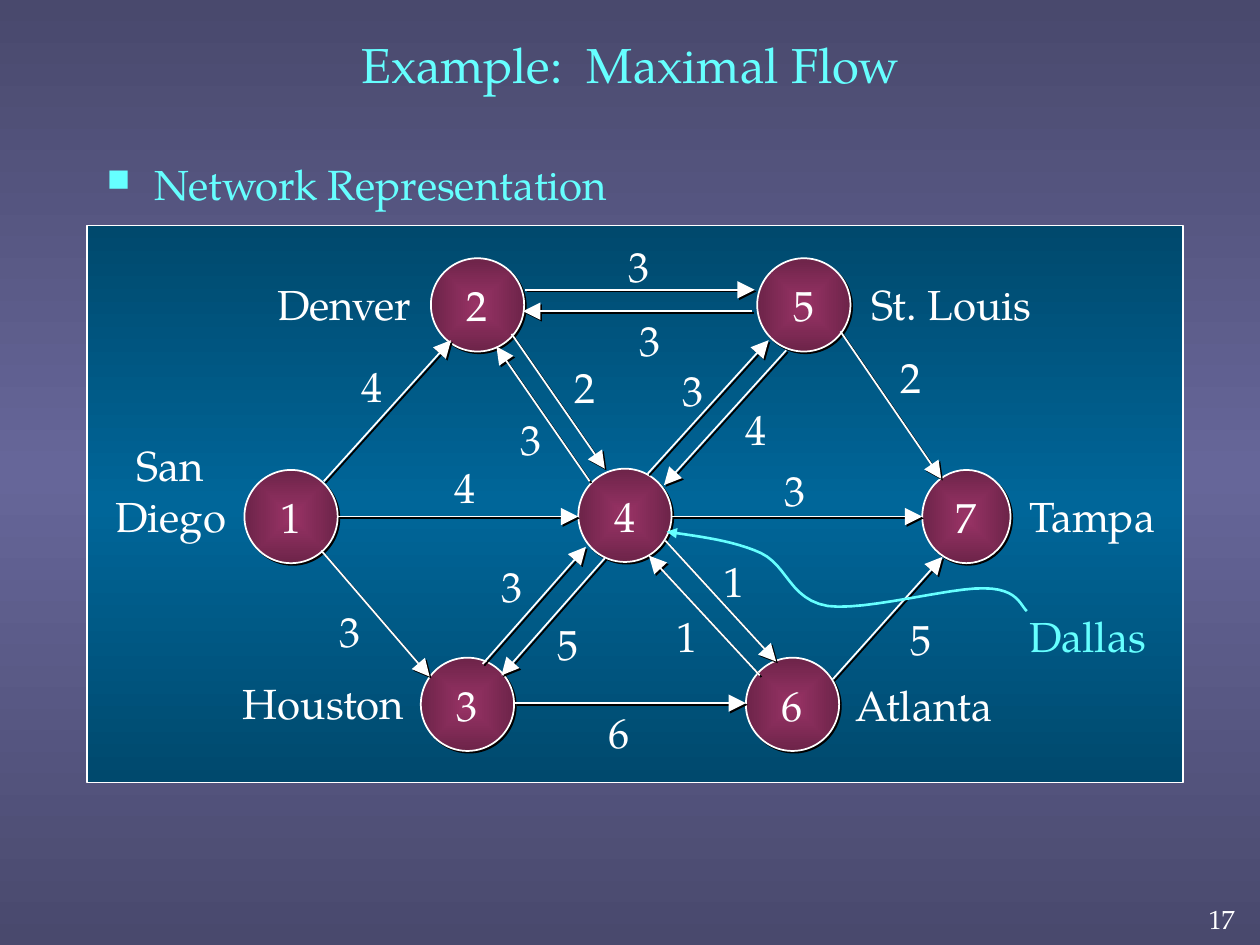
import pptx
import pptx.dml.color
import pptx.enum.shapes
import pptx.enum.text
import pptx.oxml
import pptx.oxml.ns
import pptx.util

Inches = pptx.util.Inches
Pt = pptx.util.Pt
ALIGN = pptx.enum.text.PP_ALIGN
ANCHOR = pptx.enum.text.MSO_ANCHOR
AUTO = pptx.enum.text.MSO_AUTO_SIZE
SHAPE = pptx.enum.shapes.MSO_SHAPE

FONT = "TeX Gyre Pagella"
WHITE, CYAN = "FFFFFF", "66FFFF"
PAGE_STOPS = [(0, "49496D"), (50, "666699"), (100, "49496D")]
PANEL_STOPS = [(0, "00496D"), (50, "006699"), (100, "00496D")]
NODE_STOPS = [(0, "993366"), (100, "6D2449")]
SHADOW = ('<a:outerShdw dist="17780" dir="2700000" algn="ctr" rotWithShape="0">'
          '<a:srgbClr val="000000"/></a:outerShdw>')

TITLE = "Example:  Maximal Flow"
HEADING = "Network Representation"
NODE_HEIGHT = 0.74
NODES = [
    ("2", 3.42, 2.05, 0.74), ("5", 6.01, 2.05, 0.74),
    ("1", 1.94, 3.73, 0.74), ("4", 4.59, 3.72, 0.74), ("7", 7.32, 3.73, 0.7),
    ("3", 3.34, 5.22, 0.74), ("6", 5.92, 5.22, 0.74),
]
ARCS = [
    ((2.57, 3.82), (3.58, 2.7), "4", (2.77, 2.81)),
    ((2.68, 4.1), (4.59, 4.1), "4", (3.51, 3.61)),
    ((2.55, 4.37), (3.41, 5.37), "3", (2.6, 4.76)),
    ((4.17, 2.3), (5.99, 2.3), "3", (4.89, 1.86)),
    ((5.97, 2.47), (4.15, 2.47), "3", (4.98, 2.45)),
    ((4.06, 2.65), (4.8, 3.72), "2", (4.46, 2.82)),
    ((4.68, 3.82), (3.94, 2.75), "3", (4.03, 3.23)),
    ((5.14, 3.76), (6.1, 2.7), "3", (5.32, 2.84)),
    ((6.24, 2.78), (5.27, 3.85), "4", (5.82, 3.15)),
    ((6.67, 2.63), (7.47, 3.8), "2", (7.05, 2.74)),
    ((5.33, 4.1), (7.32, 4.1), "3", (6.13, 3.64)),
    ((5.28, 4.29), (6.16, 5.25), "1", (5.64, 4.36)),
    ((6.03, 5.36), (5.15, 4.41), "1", (5.27, 4.8)),
    ((3.83, 5.27), (4.65, 4.34), "3", (3.88, 4.4)),
    ((4.8, 4.43), (3.98, 5.36), "5", (4.33, 4.86)),
    ((4.09, 5.58), (5.92, 5.58), "6", (4.73, 5.56)),
    ((6.61, 5.39), (7.48, 4.42), "5", (7.13, 4.82)),
]
SHADOWED_LABEL = (7.13, 4.82)
CITIES = [
    ("Denver", 2.1, 2.16, 1.29, 0.5, WHITE),
    ("San\nDiego", 0.81, 3.44, 1.09, 0.9, WHITE),
    ("St. Louis", 6.82, 2.16, 1.48, 0.5, WHITE),
    ("Houston", 1.83, 5.33, 1.49, 0.5, WHITE),
    ("Tampa", 8.07, 3.84, 1.23, 0.5, WHITE),
    ("Atlanta", 6.69, 5.34, 1.3, 0.5, WHITE),
    ("Dallas", 8.07, 4.8, 1.13, 0.5, CYAN),
]
POINTER_START = (5.29, 4.22)
POINTER_CURVES = [
    ((5.56, 4.26), (5.82, 4.29), (6.04, 4.39)),
    ((6.25, 4.49), (6.27, 4.76), (6.57, 4.81)),
    ((6.87, 4.85), (7.55, 4.66), (7.81, 4.67)),
    ((8.08, 4.67), (8.1, 4.81), (8.15, 4.85)),
]
CURVE_STEPS = 12


def color(value):
    return pptx.dml.color.RGBColor.from_string(value)


def add_xml(parent, markup):
    namespace = pptx.oxml.ns.nsdecls("a")
    wrapper = pptx.oxml.parse_xml(f"<a:wrapper {namespace}>{markup}</a:wrapper>")
    for child in list(wrapper):
        parent.append(child)


def set_gradient(fill, element, stops, radial=False):
    fill.gradient()
    gradient = element.xpath(".//a:gradFill")[0]
    for child in list(gradient):
        gradient.remove(child)
    marks = "".join(f'<a:gs pos="{position * 1000}"><a:srgbClr val="{value}"/></a:gs>'
                    for position, value in stops)
    direction = ('<a:path path="shape"><a:fillToRect l="50000" t="50000" r="50000" b="50000"/></a:path>'
                 if radial else '<a:lin ang="5400000" scaled="0"/>')
    add_xml(gradient, f"<a:gsLst>{marks}</a:gsLst>{direction}")


def set_line(line, value=WHITE, width=1):
    line.color.rgb = color(value)
    line.width = Pt(width)


def set_shadow(element):
    add_xml(element.spPr, f"<a:effectLst>{SHADOW}</a:effectLst>")


def write(shape, text, size=24, value=WHITE, align=ALIGN.LEFT, anchor=ANCHOR.TOP,
          wrap=False, auto=AUTO.NONE, shadow=False):
    frame = shape.text_frame
    frame.text = text
    frame.word_wrap = wrap
    frame.auto_size = auto
    frame.vertical_anchor = anchor
    for para in frame.paragraphs:
        para.alignment = align
        for span in para.runs:
            span.font.size = Pt(size)
            span.font.color.rgb = color(value)
            if shadow:
                add_xml(span.font._element, f"<a:effectLst>{SHADOW}</a:effectLst>")
            span.font.name = FONT
    return frame


def add_text(page, text, left, top, width, height, **style):
    box = page.shapes.add_textbox(Inches(left), Inches(top), Inches(width), Inches(height))
    return write(box, text, **style)


def add_node(page, text, left, top, width):
    node = page.shapes.add_shape(SHAPE.OVAL, Inches(left), Inches(top),
                                 Inches(width), Inches(NODE_HEIGHT))
    set_gradient(node.fill, node.element, NODE_STOPS, radial=True)
    set_line(node.line)
    set_shadow(node.element)
    write(node, text, align=ALIGN.CENTER, anchor=ANCHOR.MIDDLE)


def add_arc(page, start, end):
    arc = page.shapes.add_connector(pptx.enum.shapes.MSO_CONNECTOR.STRAIGHT,
                                    *(Inches(value) for value in start + end))
    set_line(arc.line)
    add_xml(arc.element.spPr.ln, '<a:tailEnd type="triangle" w="lg" len="lg"/>')
    set_shadow(arc.element)


def curve_points(start, curves):
    points = []
    for first, second, end in curves:
        for step in range(1, CURVE_STEPS + 1):
            t = step / CURVE_STEPS
            weights = ((1 - t) ** 3, 3 * t * (1 - t) ** 2, 3 * t * t * (1 - t), t ** 3)
            points.append(tuple(
                Inches(sum(weight * point[axis] for weight, point
                           in zip(weights, (start, first, second, end))))
                for axis in (0, 1)))
        start = end
    return points


def add_pointer(page):
    builder = page.shapes.build_freeform(*(Inches(value) for value in POINTER_START))
    builder.add_line_segments(curve_points(POINTER_START, POINTER_CURVES), close=False)
    pointer = builder.convert_to_shape()
    pointer.fill.background()
    set_line(pointer.line, CYAN, 1.5)
    add_xml(pointer.element.spPr.ln, '<a:headEnd type="triangle"/>')
    pointer.shadow.inherit = False


def main():
    deck = pptx.Presentation()
    deck.slide_width, deck.slide_height = Inches(10), Inches(7.5)
    page = deck.slides.add_slide(deck.slide_layouts.get_by_name("Title Only"))
    set_gradient(page.background.fill, page.element, PAGE_STOPS)

    title = page.shapes.title
    title.left, title.top, title.width, title.height = map(Inches, (0.75, 0.06, 8.5, 0.89))
    write(title, TITLE, size=28, value=CYAN, align=ALIGN.CENTER, anchor=ANCHOR.MIDDLE, wrap=True)

    heading = add_text(page, HEADING, 0.75, 1.21, 5.6, 0.56, value=CYAN, wrap=True)
    properties = heading.paragraphs[0]._p.get_or_add_pPr()
    properties.set("marL", str(Inches(0.38)))
    properties.set("indent", str(-Inches(0.38)))
    add_xml(properties, f'<a:buClr><a:srgbClr val="{CYAN}"/></a:buClr>'
                        '<a:buSzPct val="75000"/><a:buChar char="■"/>')

    panel = page.shapes.add_shape(SHAPE.RECTANGLE, *map(Inches, (0.69, 1.79, 8.7, 4.42)))
    set_gradient(panel.fill, panel.element, PANEL_STOPS)
    set_line(panel.line)
    panel.shadow.inherit = False

    for node in NODES:
        add_node(page, *node)
    for start, end, capacity, place in ARCS:
        add_arc(page, start, end)
        add_text(page, capacity, *place, 0.36, 0.5, auto=AUTO.SHAPE_TO_FIT_TEXT,
                 shadow=place == SHADOWED_LABEL)
    for city, left, top, width, height, value in CITIES:
        add_text(page, city.strip(), left, top, width, height, value=value,
                 align=ALIGN.CENTER if "\n" in city else ALIGN.LEFT,
                 auto=AUTO.SHAPE_TO_FIT_TEXT)
    add_pointer(page)

    number = add_text(page, "17", 9.36, 7.12, 0.59, 0.36, size=15, align=ALIGN.RIGHT,
                      wrap=True, shadow=True)
    number.margin_right = Inches(0.15)
    deck.save("out.pptx")


if __name__ == "__main__":
    main()
